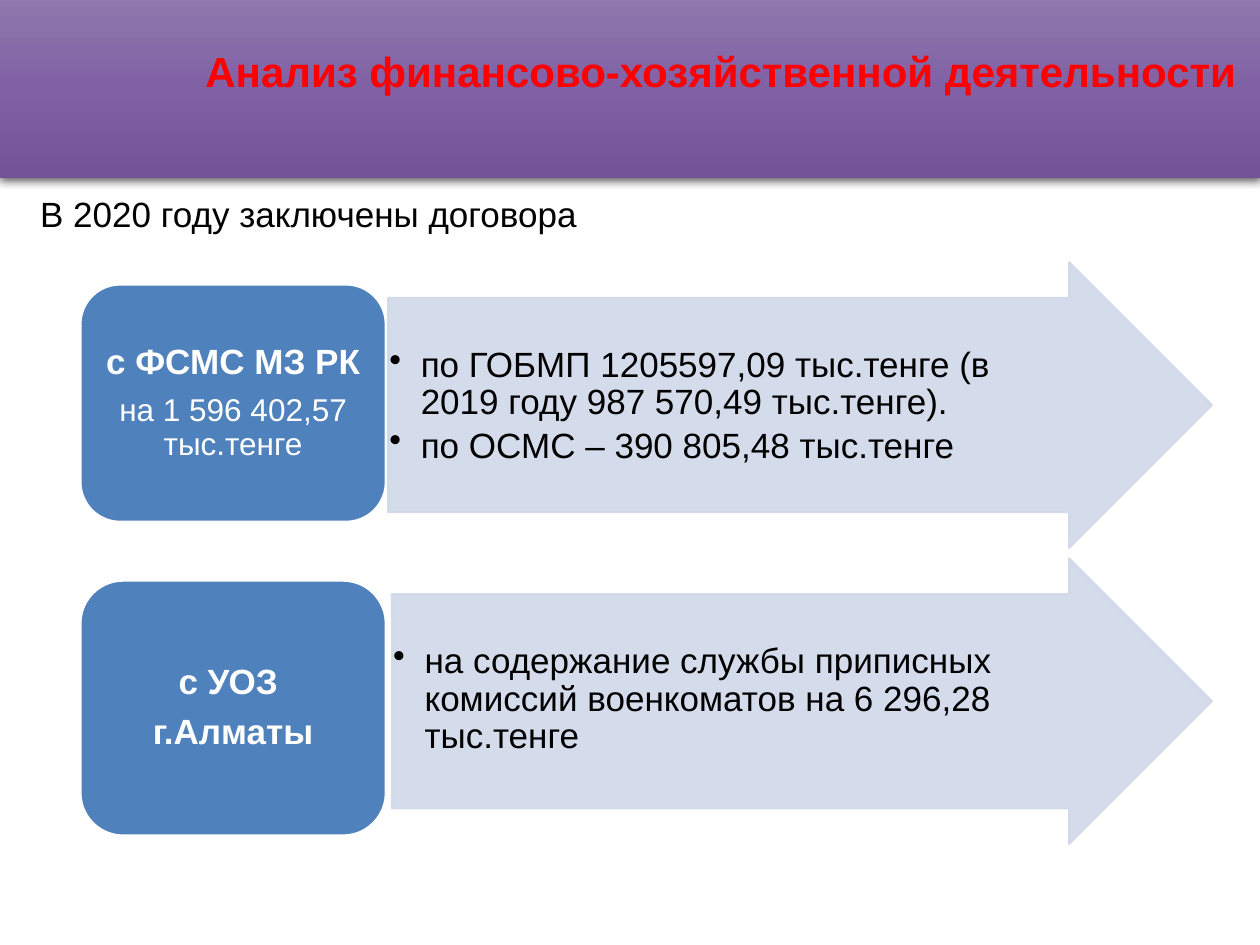
import copy
import pptx
import pptx.util
import pptx.dml.color
import pptx.enum.shapes
import pptx.enum.text
import pptx.oxml
import pptx.oxml.ns

COLORS = {
    "banner_top": "8E78AC", "banner_middle": "8061A5", "banner_bottom": "715396",
    "title": "FF0000", "text": "000000", "card": "4F81BD", "white": "FFFFFF", "arrow": "D0D8E8",
}
NS = pptx.oxml.ns.nsdecls("a")
KINDS = pptx.enum.shapes.MSO_SHAPE
ALIGN = pptx.enum.text.PP_ALIGN
ANCHOR = pptx.enum.text.MSO_ANCHOR
Inches = pptx.util.Inches

deck = pptx.Presentation()
deck.slide_width = Inches(10)
deck.slide_height = Inches(7.5)
page = deck.slides.add_slide(deck.slide_layouts[5])


def area(left, top, width, height):
    across, down = deck.slide_width / 100, deck.slide_height / 100
    return [round(left * across), round(top * down), round(width * across), round(height * down)]


def style(para, size, color, bold=False):
    para.font.size = pptx.util.Pt(size)
    para.font.bold = bold
    para.font.name = "Arial"
    para.font.color.rgb = pptx.dml.color.RGBColor.from_string(COLORS[color])
    for span in para.runs:
        span.font.size = pptx.util.Pt(size)
        span.font.bold = bold
        span.font.name = "Arial"
        span.font.color.rgb = pptx.dml.color.RGBColor.from_string(COLORS[color])


banner = page.shapes.add_shape(KINDS.RECTANGLE, *area(0, 0, 100, 18.8))
banner.line.fill.background()
banner.fill.gradient()
banner.fill.gradient_angle = 270
stops = banner.fill._fill._gradFill.find(pptx.oxml.ns.qn("a:gsLst"))
stops.insert(1, copy.deepcopy(stops[0]))
for stop, position, name in zip(
    banner.fill.gradient_stops, (0, 0.5, 1), ("banner_top", "banner_middle", "banner_bottom")
):
    stop.position = position
    stop.color.rgb = pptx.dml.color.RGBColor.from_string(COLORS[name])
banner.shadow.inherit = False
banner._element.spPr.find(pptx.oxml.ns.qn("a:effectLst")).append(pptx.oxml.parse_xml(
    f'<a:outerShdw {NS} blurRad="57150" dist="19050" dir="5400000" algn="ctr" rotWithShape="0">'
    '<a:srgbClr val="000000"><a:alpha val="63000"/></a:srgbClr></a:outerShdw>'
))
page.shapes._spTree.insert(2, banner._element)

title = page.shapes.title
title.left, title.top, title.width, title.height = area(15.3, 4.13, 84.7, 12.13)
title.text_frame.text = "Анализ финансово-хозяйственной деятельности"
title.text_frame.vertical_anchor = ANCHOR.TOP
title.text_frame.paragraphs[0].alignment = ALIGN.LEFT
style(title.text_frame.paragraphs[0], 24, "title", True)

contracts = [
    {
        "arrow": (30.8, 27.73, 65.4, 30.27),
        "card": (6.4, 30.13, 24.2, 25.07),
        "bullets": ["по ГОБМП 1205597,09 тыс.тенге (в 2019 году 987 570,49 тыс.тенге).",
                    "по ОСМС – 390 805,48 тыс.тенге"],
        "party": [("с ФСМС МЗ РК ", 20, True), ("на 1 596 402,57 тыс.тенге", 18, False)],
    },
    {
        "arrow": (31.1, 59.07, 65.1, 30.27),
        "card": (6.4, 61.47, 24.2, 26.93),
        "bullets": ["на содержание службы приписных комиссий военкоматов на 6 296,28 тыс.тенге"],
        "party": [("с УОЗ ", 20, True), ("г.Алматы", 20, True)],
    },
]

for contract in contracts:
    arrow = page.shapes.add_shape(KINDS.RIGHT_ARROW, *area(*contract["arrow"]))
    arrow.adjustments[0] = 0.75
    arrow.adjustments[1] = 0.5
    arrow.shadow.inherit = False
    arrow.line.width = pptx.util.Pt(1)
    for paint in (arrow.fill, arrow.line.fill):
        paint.solid()
        paint.fore_color.rgb = pptx.dml.color.RGBColor.from_string(COLORS["arrow"])
    for tint in arrow._element.spPr.iter(pptx.oxml.ns.qn("a:srgbClr")):
        tint.append(pptx.oxml.parse_xml(f'<a:alpha {NS} val="90000"/>'))
    frame = arrow.text_frame
    frame.word_wrap = True
    frame.vertical_anchor = ANCHOR.TOP
    frame.margin_left = frame.margin_bottom = Inches(0.01)
    frame.margin_top = Inches(0.39)
    frame.margin_right = Inches(0.58)
    frame.text = "\n".join(contract["bullets"])
    for para in frame.paragraphs:
        props = para._p.get_or_add_pPr()
        props.set("marL", str(Inches(0.25)))
        props.set("indent", str(-Inches(0.25)))
        props.append(pptx.oxml.parse_xml(f'<a:buChar {NS} char="•"/>'))
        para.alignment = ALIGN.LEFT
        para.line_spacing = 0.9
        para.space_after = pptx.util.Pt(3)
        style(para, 20, "text")

    card = page.shapes.add_shape(KINDS.ROUNDED_RECTANGLE, *area(*contract["card"]))
    card.shadow.inherit = False
    card.fill.solid()
    card.fill.fore_color.rgb = pptx.dml.color.RGBColor.from_string(COLORS["card"])
    card.line.color.rgb = pptx.dml.color.RGBColor.from_string(COLORS["white"])
    card.line.width = pptx.util.Pt(1)
    frame = card.text_frame
    frame.word_wrap = True
    frame.vertical_anchor = ANCHOR.MIDDLE
    frame.margin_left = frame.margin_right = Inches(0.08)
    frame.margin_top = frame.margin_bottom = Inches(0.04)
    frame.text = "\n".join(text for text, size, bold in contract["party"])
    for para, (text, size, bold) in zip(frame.paragraphs, contract["party"]):
        para.alignment = ALIGN.CENTER
        para.line_spacing = 0.9
        para.space_after = pptx.util.Pt(7)
        style(para, size, "white", bold)

intro = page.shapes.add_textbox(*area(2.2, 19.73, 64.1, 5.87))
intro.text_frame.word_wrap = True
intro.text_frame.text = "В 2020 году заключены договора"
style(intro.text_frame.paragraphs[0], 20, "text")

deck.save("out.pptx")
